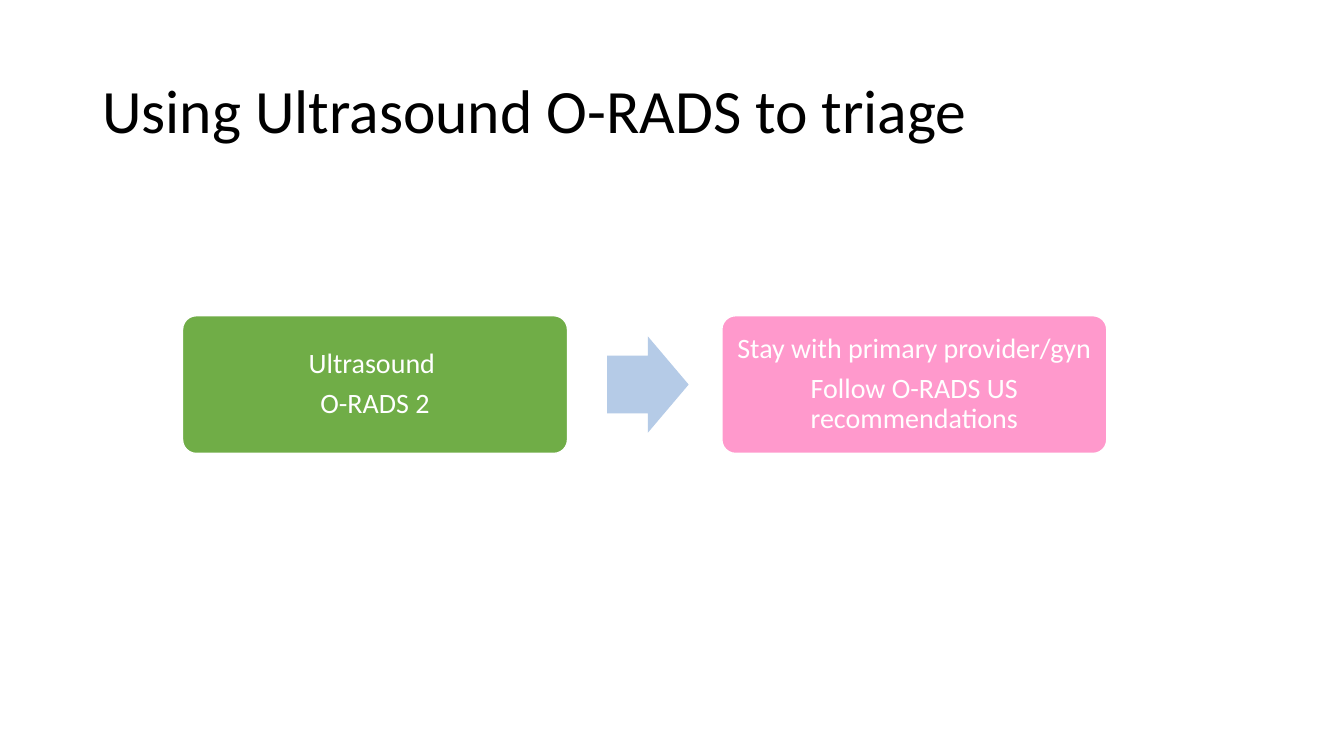
from pptx import Presentation
from pptx.dml.color import RGBColor
from pptx.enum.shapes import MSO_SHAPE
from pptx.enum.text import MSO_ANCHOR, PP_ALIGN
from pptx.util import Pt

ROUND, ARROW = MSO_SHAPE.ROUNDED_RECTANGLE, MSO_SHAPE.RIGHT_ARROW
MIDDLE = MSO_ANCHOR.MIDDLE
LEFT, CENTER = PP_ALIGN.LEFT, PP_ALIGN.CENTER

BLACK = RGBColor(0x00, 0x00, 0x00)
WHITE = RGBColor(0xFF, 0xFF, 0xFF)
GREEN = RGBColor(0x70, 0xAD, 0x47)
PINK = RGBColor(0xFF, 0x99, 0xCC)
BLUE = RGBColor(0xB5, 0xCB, 0xE7)

FONT = "Calibri"
STEPS = [
    ("Ultrasound \nO-RADS 2", GREEN),
    ("Stay with primary provider/gyn\nFollow O-RADS US recommendations", PINK),
]


def write(frame, text, size, color, align, after=0):
    frame.word_wrap = True
    frame.vertical_anchor = MIDDLE
    frame.text = text
    for para in frame.paragraphs:
        para.alignment = align
        para.line_spacing = 0.9
        para.space_after = Pt(after)
        for run in para.runs:
            run.font.name = FONT
            run.font.size = Pt(size)
            run.font.color.rgb = color


def add_title(slide, left, top, width, height):
    box = slide.shapes.add_textbox(Pt(left), Pt(top), Pt(width), Pt(height))
    write(box.text_frame, "Using Ultrasound O-RADS to triage", 44, BLACK, LEFT)


def add_form(slide, kind, left, top, width, height, fill, ratios):
    form = slide.shapes.add_shape(kind, Pt(left), Pt(top), Pt(width), Pt(height))
    form.shadow.inherit = False
    form.fill.solid()
    form.fill.fore_color.rgb = fill
    form.line.fill.background()
    for i, ratio in enumerate(ratios):
        form.adjustments[i] = ratio
    return form


def add_step(slide, left, top, width, height, text, fill):
    card = add_form(slide, ROUND, left, top, width, height, fill, [0.1])
    card.line.color.rgb = WHITE
    card.line.width = Pt(1)
    frame = card.text_frame
    frame.margin_left = frame.margin_right = Pt(6)
    frame.margin_top = frame.margin_bottom = Pt(6)
    write(frame, text, 20, WHITE, CENTER, after=7)


def add_flow(slide, left, top, width, height):
    card, gap = 275, 28.2
    pitch = (width - card) / (len(STEPS) - 1)
    for i, (text, fill) in enumerate(STEPS):
        x = left + i * pitch
        # Arrow from the card before
        if i:
            tall = 0.7 * height
            add_form(slide, ARROW, x - pitch + card + gap, top + (height - tall) / 2,
                     58.3, tall, BLUE, [0.6, 0.5])
        add_step(slide, x, top, card, height, text, fill)


def main():
    deck = Presentation()
    deck.slide_width, deck.slide_height = Pt(960), Pt(540)
    slide = deck.slides.add_slide(deck.slide_layouts[6])
    add_title(slide, 66, 28.75, 828, 104.4)
    add_flow(slide, 130.4, 225.5, 660.2, 98.4)
    deck.save("out.pptx")


if __name__ == "__main__":
    main()
